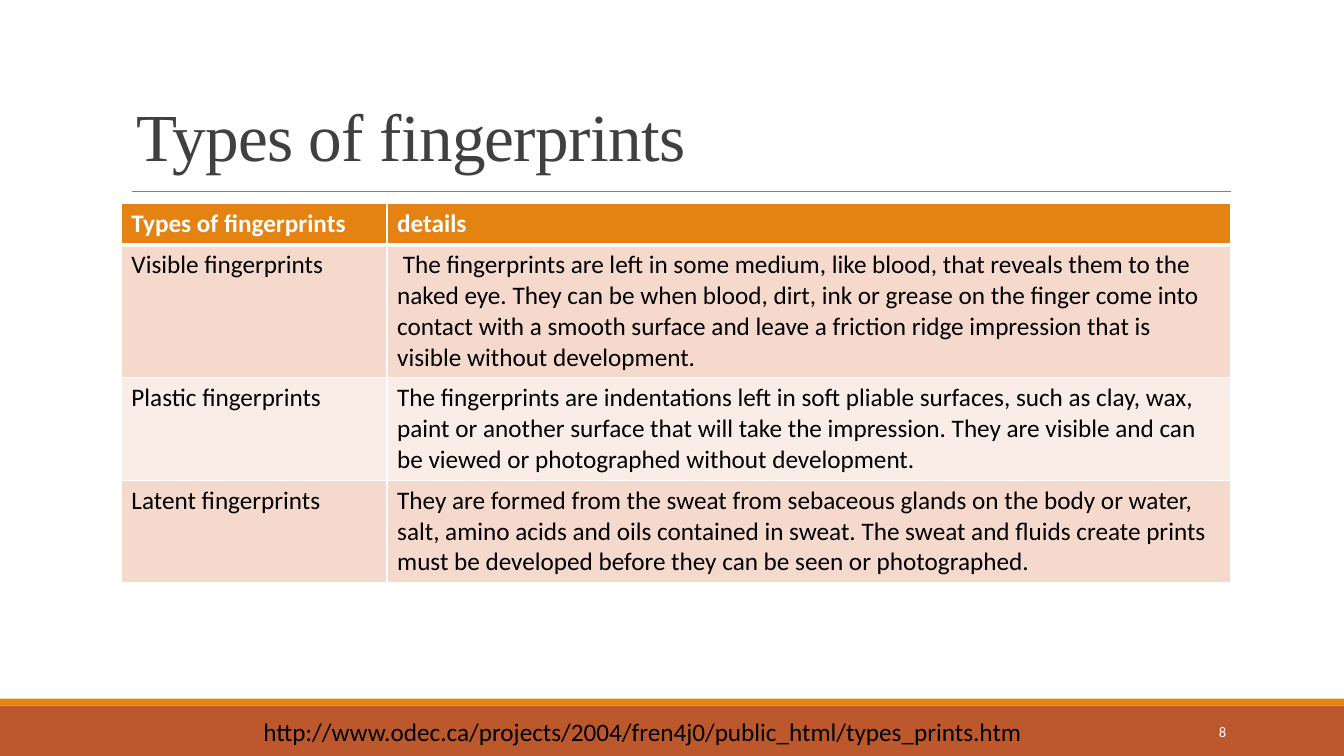
from lxml.etree import SubElement
from pptx import Presentation
from pptx.dml.color import RGBColor
from pptx.enum.shapes import MSO_CONNECTOR, MSO_SHAPE
from pptx.enum.text import MSO_ANCHOR, PP_ALIGN
from pptx.oxml import parse_xml
from pptx.oxml.ns import nsdecls, qn
from pptx.util import Pt

# Content
TITLE = "Types of fingerprints"
ROWS = [
    ("Types of fingerprints", "details"),
    ("Visible fingerprints",
     " The fingerprints are left in some medium, like blood, that reveals them to the "
     "naked eye. They can be when blood, dirt, ink or grease on the finger come into "
     "contact with a smooth surface and leave a friction ridge impression that is "
     "visible without development."),
    ("Plastic fingerprints",
     "The fingerprints are indentations left in soft pliable surfaces, such as clay, wax, "
     "paint or another surface that will take the impression. They are visible and can "
     "be viewed or photographed without development."),
    ("Latent fingerprints",
     "They are formed from the sweat from sebaceous glands on the body or water, "
     "salt, amino acids and oils contained in sweat. The sweat and fluids create prints "
     "must be developed before they can be seen or photographed."),
]
ADDRESS = "http://www.odec.ca/projects/2004/fren4j0/public_html/types_prints.htm"
PAGE_NUMBER = "8"

COLORS = {
    "white": "FFFFFF", "black": "000000", "title": "404040", "rule": "808080",
    "orange": "E48312", "rust": "BD582C", "dark band": "F5D9CC", "light band": "FAEDE7",
}
BODY_FONT, TITLE_FONT = "Calibri", "Times New Roman"
WIDTH, HEIGHT = 960, 540
FOOTER_HEIGHT, STRIPE_HEIGHT = 36, 5
COLUMN_WIDTHS = (189.8, 602.2)
ROW_HEIGHT = 29.2


def color(name):
    return RGBColor.from_string(COLORS[name])


def style(paragraph, size, color_name, font=BODY_FONT, bold=False):
    paragraph.font.size = Pt(size)
    paragraph.font.name = font
    paragraph.font.bold = bold
    paragraph.font.color.rgb = color(color_name)


def add_bar(slide, top, height, color_name):
    bar = slide.shapes.add_shape(MSO_SHAPE.RECTANGLE, 0, Pt(top), Pt(WIDTH), Pt(height))
    bar.shadow.inherit = False
    bar.fill.solid()
    bar.fill.fore_color.rgb = color(color_name)
    bar.line.fill.background()


def add_text(slide, box, text, size, color_name, font=BODY_FONT, anchor=MSO_ANCHOR.TOP):
    frame = slide.shapes.add_textbox(*map(Pt, box)).text_frame
    frame.word_wrap = True
    frame.vertical_anchor = anchor
    paragraph = frame.paragraphs[0]
    paragraph.text = text
    style(paragraph, size, color_name, font)
    return paragraph


def set_borders(cell, is_header, below_header):
    widths = {"L": 1, "R": 1, "T": 3 if below_header else 1, "B": 3 if is_header else 1}
    properties = cell._tc.get_or_add_tcPr()
    for index, (side, width) in enumerate(widths.items()):
        properties.insert(index, parse_xml(
            f'<a:ln{side} {nsdecls("a")} w="{Pt(width)}"><a:solidFill>'
            f'<a:srgbClr val="{COLORS["white"]}"/></a:solidFill></a:ln{side}>'))


presentation = Presentation()
presentation.slide_width, presentation.slide_height = Pt(WIDTH), Pt(HEIGHT)
slide = presentation.slides.add_slide(presentation.slide_layouts[6])

# Footer bars
footer_top = HEIGHT - FOOTER_HEIGHT
add_bar(slide, footer_top, FOOTER_HEIGHT, "rust")
add_bar(slide, footer_top - STRIPE_HEIGHT, STRIPE_HEIGHT, "orange")

# Rule under the title
rule = slide.shapes.add_connector(MSO_CONNECTOR.STRAIGHT, Pt(94), Pt(136.8), Pt(879), Pt(136.8))
rule.line.color.rgb = color("rule")
rule.line.width = Pt(0.5)
SubElement(rule._element.spPr, qn("a:effectLst"))

# Table: rows grow to fit their text
table = slide.shapes.add_table(len(ROWS), len(COLUMN_WIDTHS), Pt(86.7), Pt(145.6),
                               Pt(sum(COLUMN_WIDTHS)), Pt(ROW_HEIGHT * len(ROWS))).table
for column, width in zip(table.columns, COLUMN_WIDTHS):
    column.width = Pt(width)
for row_index, texts in enumerate(ROWS):
    table.rows[row_index].height = Pt(ROW_HEIGHT)
    is_header = row_index == 0
    fill = "orange" if is_header else "dark band" if row_index % 2 else "light band"
    for column_index, text in enumerate(texts):
        cell = table.cell(row_index, column_index)
        cell.text = text
        style(cell.text_frame.paragraphs[0], 18, "white" if is_header else "black",
              bold=is_header)
        cell.fill.solid()
        cell.fill.fore_color.rgb = color(fill)
        set_borders(cell, is_header, row_index == 1)

# Footer text
number = add_text(slide, (780, 508.3, 103, 28.8), PAGE_NUMBER, 10.5, "white",
                  anchor=MSO_ANCHOR.MIDDLE)
number.alignment = PP_ALIGN.RIGHT
add_text(slide, (181, 508.3, 650, 29), ADDRESS, 18, "black")

# Title
title = add_text(slide, (90.7, 14.4, 792, 114.2), TITLE, 48, "title", TITLE_FONT,
                 MSO_ANCHOR.BOTTOM)
title.line_spacing = 0.85
title.runs[0].font._element.set("spc", "-50")

presentation.save("out.pptx")
